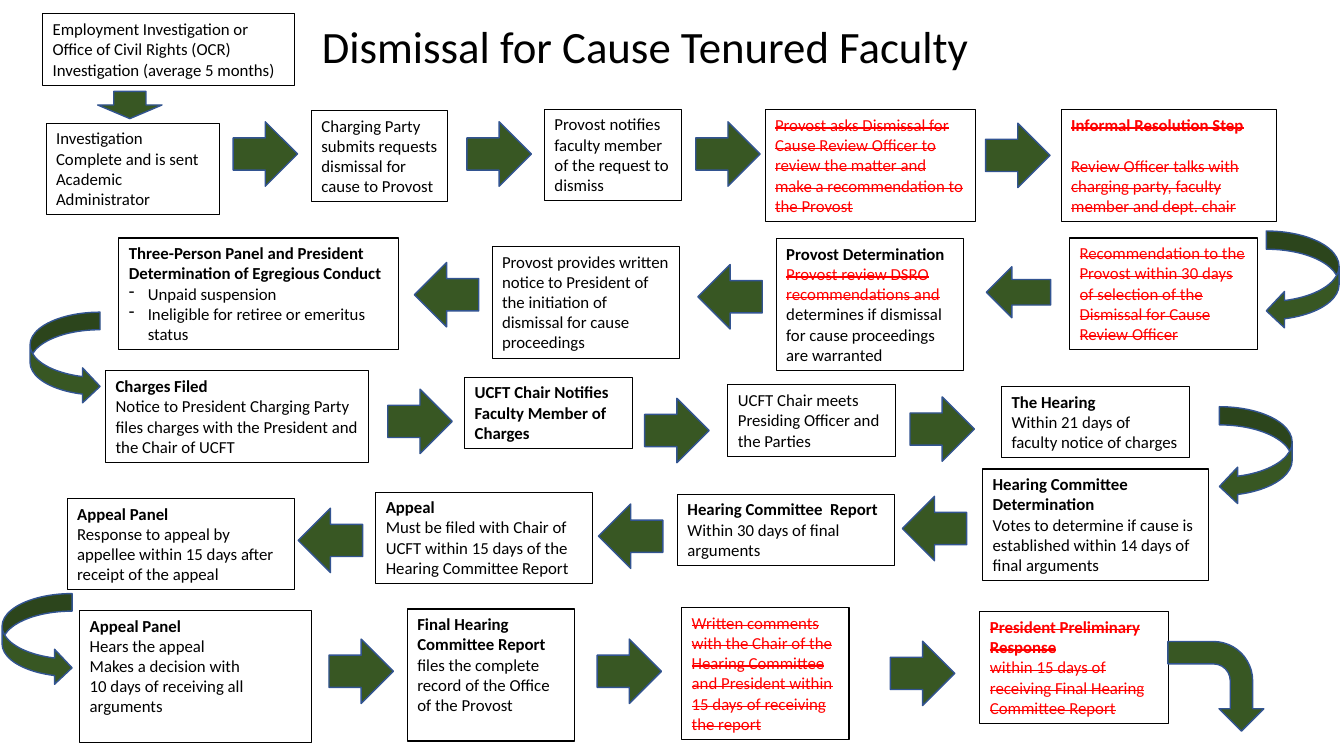
from functools import partial

from lxml import etree
from pptx import Presentation
from pptx.dml.color import RGBColor
from pptx.enum import shapes, text
from pptx.oxml import ns
from pptx.util import Pt

BLACK = RGBColor(0x00, 0x00, 0x00)
RED = RGBColor(0xFF, 0x00, 0x00)
GREEN = RGBColor(0x38, 0x57, 0x23)
BLUE = RGBColor(0x32, 0x54, 0x91)

LINE_H, PADDING = 14.5, 7.3
ARROW = 46
SHAPE = shapes.MSO_SHAPE


def add_text(p, words, size=12, color=BLACK, bold=False, strike=False):
    r = p.add_run()
    r.text = words
    r.font.name = "Calibri"
    r.font.size = Pt(size)
    r.font.bold = bold
    r.font.color.rgb = color
    if strike:
        r.font._element.set("strike", "sngStrike")


def run(words, **fmt):
    return words, fmt


bold = partial(run, bold=True)
struck = partial(run, color=RED, strike=True)


def add_dash(p):
    """Give the paragraph a hanging dash as its bullet."""
    pPr = p._p.get_or_add_pPr()
    pPr.set("marL", str(Pt(13.5)))
    pPr.set("indent", str(-Pt(13.5)))
    etree.SubElement(pPr, ns.qn("a:buChar")).set("char", "-")


def add_step(slide, x, y, w, lines, paragraphs, dashed=(), gap=0):
    """Draw a box as high as its lines; each paragraph is a list of runs."""
    sp = slide.shapes.add_shape(SHAPE.RECTANGLE, Pt(x), Pt(y), Pt(w),
                                Pt(PADDING + LINE_H * lines))
    sp.shadow.inherit = False
    sp.fill.background()
    sp.line.color.rgb = BLACK
    sp.line.width = Pt(0.75)
    tf = sp.text_frame
    tf.word_wrap = True
    tf.vertical_anchor = text.MSO_ANCHOR.TOP
    for i, runs in enumerate(paragraphs):
        p = tf.add_paragraph() if i else tf.paragraphs[0]
        p.alignment = text.PP_ALIGN.LEFT
        if i and gap:
            p.space_before = Pt(gap)
        if i in dashed:
            add_dash(p)
        for words, fmt in runs:
            add_text(p, words, **fmt)


def add_arrow(slide, kind, x, y, w=ARROW, h=ARROW, rotation=0):
    sp = slide.shapes.add_shape(kind, Pt(x), Pt(y), Pt(w), Pt(h))
    sp.shadow.inherit = False
    sp.rotation = rotation
    sp.fill.solid()
    sp.fill.fore_color.rgb = GREEN
    sp.line.color.rgb = BLUE
    sp.line.width = Pt(1)


def add_title(slide, x, y, w, h):
    tf = slide.shapes.add_textbox(Pt(x), Pt(y), Pt(w), Pt(h)).text_frame
    tf.word_wrap = True
    tf.vertical_anchor = text.MSO_ANCHOR.BOTTOM
    p = tf.paragraphs[0]
    p.alignment = text.PP_ALIGN.CENTER
    p.line_spacing = 0.9
    add_text(p, "Dismissal for Cause Tenured Faculty", size=32)


def add_row(slide, left, top, steps, arrows, rotation=0):
    """Place steps and arrows, given as offsets from the row's corner."""
    for dx, dy, w, lines, paragraphs, *rest in steps:
        add_step(slide, left + dx, top + dy, w, lines, paragraphs,
                 **(rest[0] if rest else {}))
    for dx, dy, *size in arrows:
        add_arrow(slide, SHAPE.RIGHT_ARROW, left + dx, top + dy, *size,
                  rotation=rotation)


def add_start(slide, x, y):
    add_step(slide, x, y, 180, 3, [[run(
        "Employment Investigation or Office of Civil Rights (OCR) "
        "Investigation (average 5 months)")]])
    add_arrow(slide, SHAPE.RIGHT_ARROW, x + 52.5, y + 42, 19.5, ARROW, 90)


def add_request_row(slide, x, y):
    add_row(slide, x, y, [
        (0, 10, 124, 4, [[run("Investigation Complete and is sent Academic Administrator")]]),
        (189.5, 1, 97.5, 4, [[run("Charging Party submits requests dismissal for cause to Provost")]]),
        (356, 0, 97.5, 4, [[run("Provost notifies faculty member of the request to dismiss")]]),
        (513.5, 0.5, 150.5, 5, [[struck(
            "Provost asks Dismissal for Cause Review Officer to review the "
            "matter and make a recommendation to the Provost")]]),
        (725, 0.5, 154, 5, [
            [struck("Informal Resolution Step", bold=True)],
            [struck("Review Officer talks with charging party, faculty "
                    "member and dept. chair")]], {"gap": 14.5}),
    ], [(133.5, 9), (300.5, 9), (464, 9), (671, 10)])


def add_determination_row(slide, x, y):
    add_row(slide, x, y, [
        (0, 0, 200, 5, [
            [bold("Three-Person Panel and President Determination of Egregious Conduct")],
            [run("Unpaid suspension")],
            [run("Ineligible for retiree or emeritus status")]], {"dashed": (1, 2)}),
        (266.5, 6, 134, 5, [[run(
            "Provost provides written notice to President of the initiation "
            "of dismissal for cause proceedings")]]),
        (469.5, 0.5, 134, 6, [
            [bold("Provost Determination")],
            [struck("Provost review DSRO recommendations and "),
             run("determines if dismissal for cause proceedings are warranted")]]),
        (679, 0, 134, 5, [[struck(
            "Recommendation to the Provost within 30 days of selection of "
            "the Dismissal for Cause Review Officer")]]),
    ], [(211, 17.5), (413.5, 19), (619.5, 20.5, ARROW, 36.5)], rotation=180)


def add_charges_row(slide, x, y):
    add_row(slide, x, y, [
        (0, 0, 187.5, 4, [
            [bold("Charges Filed")],
            [run("Notice to President Charging Party files charges with the "
                 "President and the Chair of UCFT")]]),
        (256.5, 4.5, 119.5, 3, [[bold("UCFT Chair Notifies Faculty Member of Charges")]]),
        (444.5, 10, 119.5, 3, [[run("UCFT Chair meets Presiding Officer and the Parties")]]),
        (640, 11, 134, 3, [
            [bold("The Hearing")],
            [run("Within 21 days of faculty notice of charges")]]),
    ], [(201.5, 13), (385, 19.5), (574.5, 18.5)])


def add_appeal_row(slide, x, y):
    add_row(slide, x, y, [
        (0, 21, 162.5, 4, [
            [bold("Appeal Panel")],
            [run("Response to appeal by appellee within 15 days after "
                 "receipt of the appeal")]]),
        (220.5, 16.5, 155, 4, [
            [bold("Appeal")],
            [run("Must be filed with Chair of UCFT within 15 days of the "
                 "Hearing Committee Report")]]),
        (436, 18, 155, 3, [
            [bold("Hearing Committee  Report")],
            [run("Within 30 days of final arguments")]]),
        (654, 0, 161, 5, [
            [bold("Hearing Committee Determination")],
            [run("Votes to determine if cause is established within 14 days "
                 "of final arguments")]]),
    ], [(165, 28), (379.5, 25), (596.5, 19.5)], rotation=180)


def add_report_row(slide, x, y):
    add_row(slide, x, y, [
        (0, 2, 165.5, 6, [
            [bold("Appeal Panel")],
            [run("Hears the appeal")],
            [run("Makes a decision with")],
            [run("10 days of receiving all arguments")]]),
        (234, 1, 119.5, 6, [[
            bold("Final Hearing Committee Report "),
            run("files the complete record of the Office of the Provost")]]),
        (430, 0, 119.5, 6, [[struck(
            "Written comments with the Chair of the Hearing Committee and "
            "President within 15 days of receiving the report")]]),
        (643, 3, 134.5, 5, [
            [struck("President Preliminary Response", bold=True)],
            [struck("within 15 days of receiving Final Hearing Committee Report")]]),
    ], [(178, 22.5), (369.5, 22.5), (579, 24)])
    add_arrow(slide, SHAPE.BENT_ARROW, x + 779.5, y + 22, 64, 68.5, 90)


def add_turns(slide):
    """Draw the curved arrows that lead from one row to the next."""
    for x, y in ((895.5, 174), (862, 299.5)):
        add_arrow(slide, SHAPE.CURVED_DOWN_ARROW, x, y, 70, 52, 90)
    for x, y in ((21.5, 223), (1.5, 424)):
        add_arrow(slide, SHAPE.CURVED_RIGHT_ARROW, x, y, 50, 65.5)


def main():
    prs = Presentation()
    prs.slide_width, prs.slide_height = Pt(960), Pt(540)
    slide = prs.slides.add_slide(prs.slide_layouts[6])
    add_title(slide, 101, 10, 720, 46)
    add_start(slide, 30.5, 10)
    add_request_row(slide, 33, 78)
    add_determination_row(slide, 85, 170)
    add_charges_row(slide, 75.5, 265)
    add_appeal_row(slide, 48, 335)
    add_report_row(slide, 57, 434)
    add_turns(slide)
    prs.save("out.pptx")


if __name__ == "__main__":
    main()
